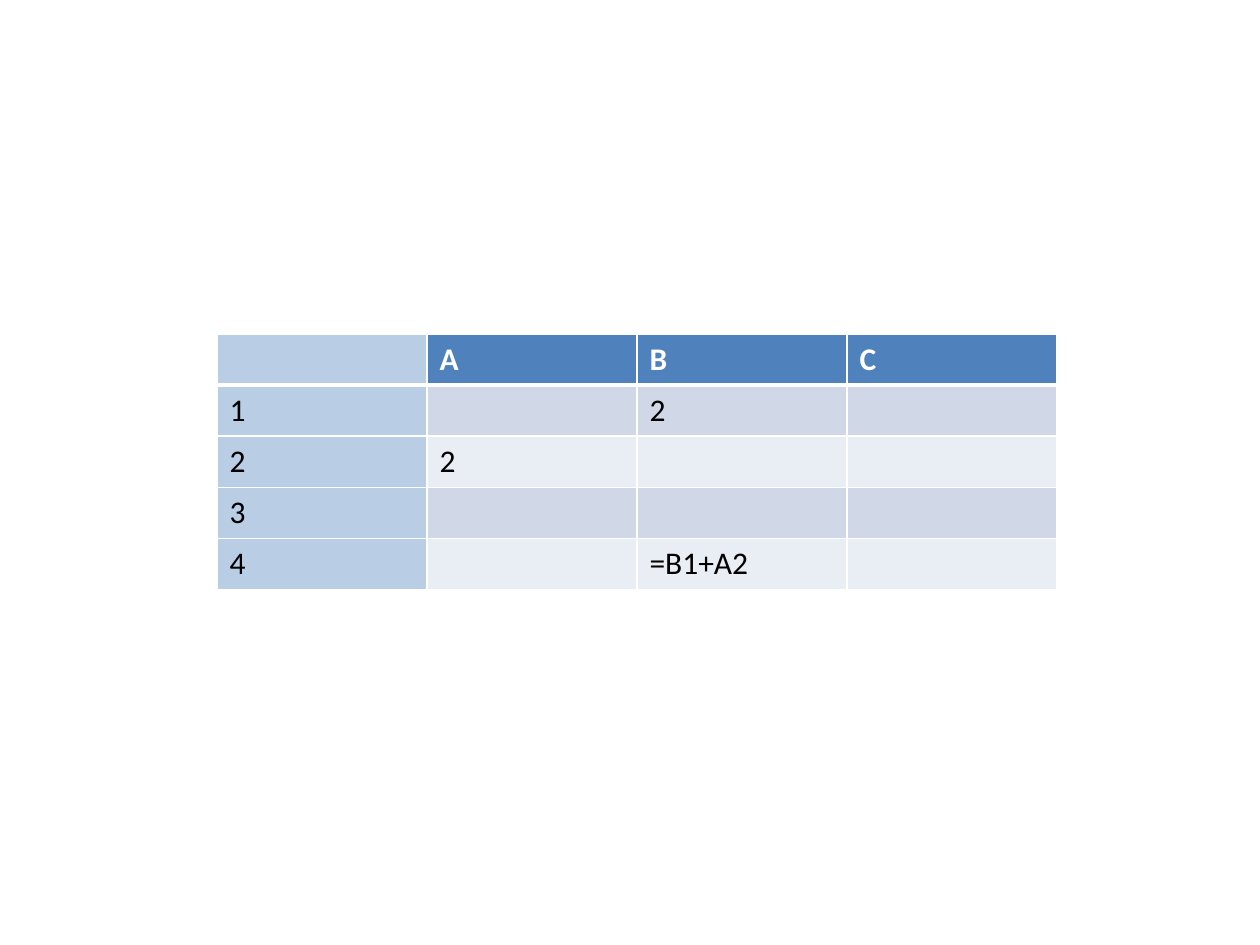
import pptx
import pptx.dml.color
import pptx.oxml
import pptx.oxml.ns
import pptx.util

PX = pptx.util.Inches(1) // 126

WHITE = pptx.dml.color.RGBColor(0xFF, 0xFF, 0xFF)
BLACK = pptx.dml.color.RGBColor(0x00, 0x00, 0x00)
HEADER_BLUE = pptx.dml.color.RGBColor(0x4F, 0x81, 0xBD)
LABEL_BLUE = pptx.dml.color.RGBColor(0xB9, 0xCD, 0xE5)
BANDS = (
    pptx.dml.color.RGBColor(0xD0, 0xD8, 0xE8),
    pptx.dml.color.RGBColor(0xE9, 0xED, 0xF4),
)

SHEET = [
    ["", "A", "B", "C"],
    ["1", "", "2", ""],
    ["2", "2", "", ""],
    ["3", "", "", ""],
    ["4", "", "=B1+A2", ""],
]


def set_borders(cell, color, **widths):
    """Draw the L, R, T and B edges, with widths in points."""
    properties = cell._tc.get_or_add_tcPr()
    for side in "LRTB":
        width = pptx.util.Pt(widths[side])
        properties.append(pptx.oxml.parse_xml(
            f'<a:ln{side} {pptx.oxml.ns.nsdecls("a")} w="{width}">'
            f'<a:solidFill><a:srgbClr val="{color}"/></a:solidFill></a:ln{side}>'
        ))


def cell_fill(row, column):
    if column == 0:
        return LABEL_BLUE
    if row == 0:
        return HEADER_BLUE
    return BANDS[(row - 1) % 2]


def add_spreadsheet(slide, left, top, width, height):
    box = (left * PX, top * PX, width * PX, height * PX)
    table = slide.shapes.add_table(len(SHEET), len(SHEET[0]), *box).table
    for row, texts in enumerate(SHEET):
        is_header = row == 0
        for column, text in enumerate(texts):
            cell = table.cell(row, column)
            set_borders(cell, WHITE, L=1, R=1,
                        T=3 if row == 1 else 1, B=3 if is_header else 1)
            cell.fill.solid()
            cell.fill.fore_color.rgb = cell_fill(row, column)
            cell.text_frame.text = text
            font = cell.text_frame.paragraphs[0].font
            font.name = "Calibri"
            font.size = pptx.util.Pt(18)
            font.bold = is_header
            font.color.rgb = WHITE if is_header else BLACK
            for run in cell.text_frame.paragraphs[0].runs:
                run.font.name = "Calibri"
                run.font.size = pptx.util.Pt(18)
                run.font.bold = is_header
                run.font.color.rgb = WHITE if is_header else BLACK


def main():
    presentation = pptx.Presentation()
    presentation.slide_width = 1260 * PX
    presentation.slide_height = 945 * PX
    slide = presentation.slides.add_slide(presentation.slide_layouts[6])
    add_spreadsheet(slide, left=217, top=334, width=840, height=255)
    presentation.save("out.pptx")


if __name__ == "__main__":
    main()
